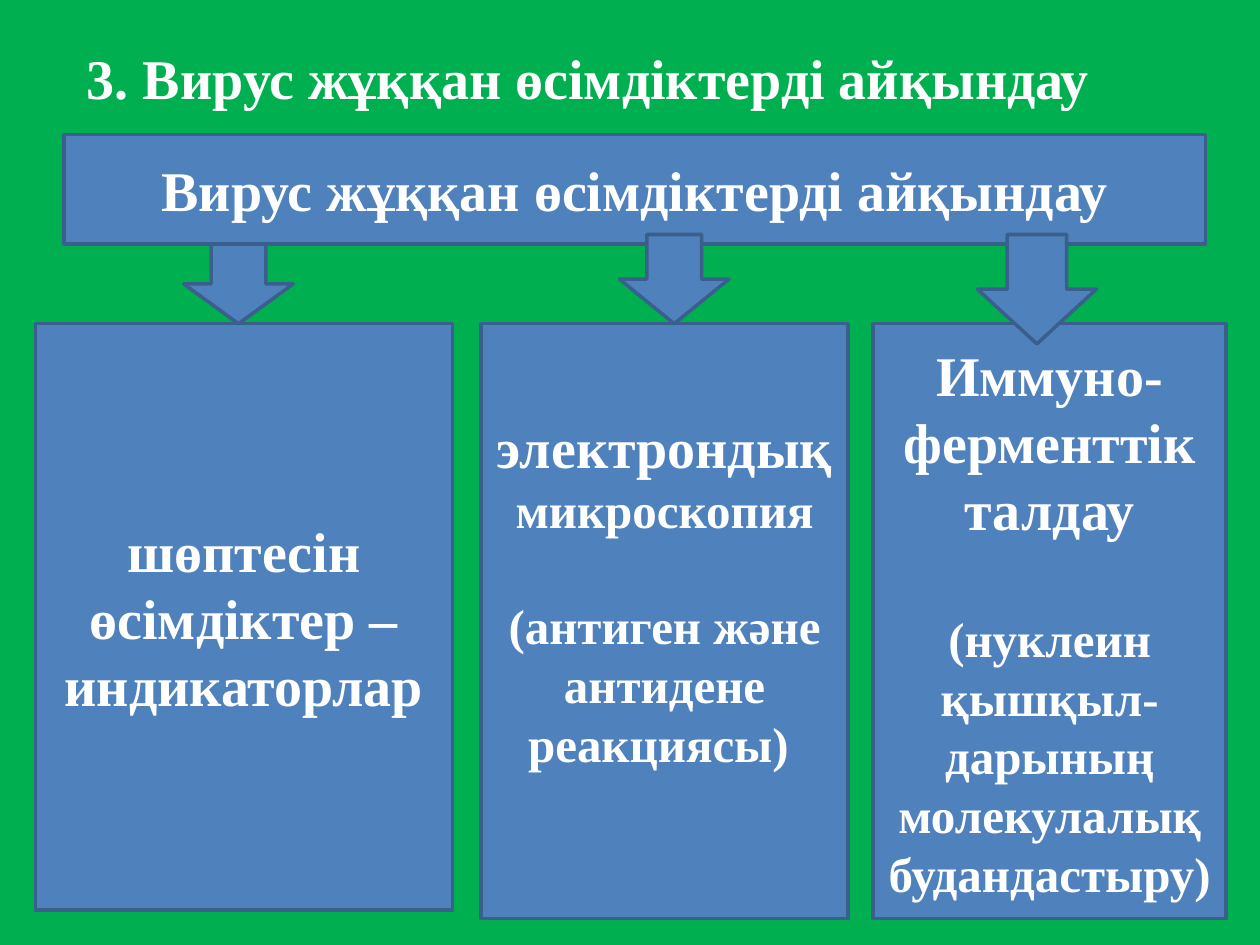
from pptx import Presentation
from pptx.dml.color import RGBColor
from pptx.enum.shapes import MSO_SHAPE
from pptx.enum.text import MSO_ANCHOR, MSO_AUTO_SIZE, PP_ALIGN
from pptx.util import Pt

TOPIC = "Вирус жұққан өсімдіктерді айқындау"
CARD_TOP = 185

# left, width, height, space kept below the text, paragraphs;
# a paragraph is (space before, [(text, size), ...])
CARDS = [
    (20.2, 238.3, 335, 0, [(0, [("шөптесін өсімдіктер –индикаторлар", 32)])]),
    (275, 209.5, 340, 33, [
        (0, [("электрондық ", 32), ("микроскопия", 28)]),
        (33, [("(антиген және антидене реакциясы) ", 28)]),
    ]),
    (499, 201.6, 340, 0, [
        (0, [("Иммуно- ферменттік талдау", 32)]),
        (38, [("(нуклеин қышқыл-дарының молекулалық будандастыру)", 28)]),
    ]),
]

# left, top, width, height
ARROWS = [
    (105, 139.5, 62.6, 45.5),
    (354, 134, 62.6, 51),
    (558.5, 134, 68, 62.5),
]


def color(value):
    return RGBColor.from_string(value)


def add_text(paragraph, text, size=32, bold=True, font="Times New Roman", fill="FFFFFF"):
    run = paragraph.add_run()
    run.text = text
    run.font.size = Pt(size)
    run.font.bold = bold
    run.font.name = font
    run.font.color.rgb = color(fill)


class SlideBuilder:
    background = "00B050"
    fill = "4F81BD"
    outline = "3A5F8C"

    def __init__(self, slide):
        self.slide = slide
        slide.background.fill.solid()
        slide.background.fill.fore_color.rgb = color(self.background)

    def title(self, text, left, top, width, height, indent):
        heading = self.slide.shapes.title
        heading.left, heading.top = Pt(left), Pt(top)
        heading.width, heading.height = Pt(width), Pt(height)
        frame = heading.text_frame
        frame.word_wrap = True
        frame.auto_size = MSO_AUTO_SIZE.SHAPE_TO_FIT_TEXT
        frame.vertical_anchor = MSO_ANCHOR.TOP
        paragraph = frame.paragraphs[0]
        paragraph.alignment = PP_ALIGN.JUSTIFY
        properties = paragraph._p.get_or_add_pPr()
        properties.set("marL", str(Pt(indent)))
        properties.set("indent", str(-Pt(indent)))
        add_text(paragraph, text)

    def block(self, preset, left, top, width, height):
        shape = self.slide.shapes.add_shape(preset, Pt(left), Pt(top), Pt(width), Pt(height))
        shape.shadow.inherit = False
        shape.fill.solid()
        shape.fill.fore_color.rgb = color(self.fill)
        shape.line.color.rgb = color(self.outline)
        shape.line.width = Pt(2)
        return shape

    def card(self, left, top, width, height, paragraphs, space_below=0):
        frame = self.block(MSO_SHAPE.RECTANGLE, left, top, width, height).text_frame
        frame.word_wrap = True
        frame.vertical_anchor = MSO_ANCHOR.MIDDLE
        frame.margin_bottom = Pt(3.6 + space_below)
        for index, (space_before, runs) in enumerate(paragraphs):
            paragraph = frame.add_paragraph() if index else frame.paragraphs[0]
            paragraph.alignment = PP_ALIGN.CENTER
            paragraph.space_before = Pt(space_before)
            for text, size in runs:
                add_text(paragraph, text, size=size)

    def arrow(self, left, top, width, height):
        self.block(MSO_SHAPE.DOWN_ARROW, left, top, width, height)


def main():
    presentation = Presentation()
    presentation.slide_width, presentation.slide_height = Pt(720), Pt(540)
    title_only = presentation.slide_layouts[5]
    builder = SlideBuilder(presentation.slides.add_slide(title_only))

    builder.title(f"3. {TOPIC}", 42.5, 21, 612, 46, indent=58.3)
    builder.card(36.7, 77, 652.3, 62.6, [(0, [(TOPIC, 32)])])
    for left, width, height, space_below, paragraphs in CARDS:
        builder.card(left, CARD_TOP, width, height, paragraphs, space_below)
    for bounds in ARROWS:
        builder.arrow(*bounds)

    presentation.save("out.pptx")


if __name__ == "__main__":
    main()
